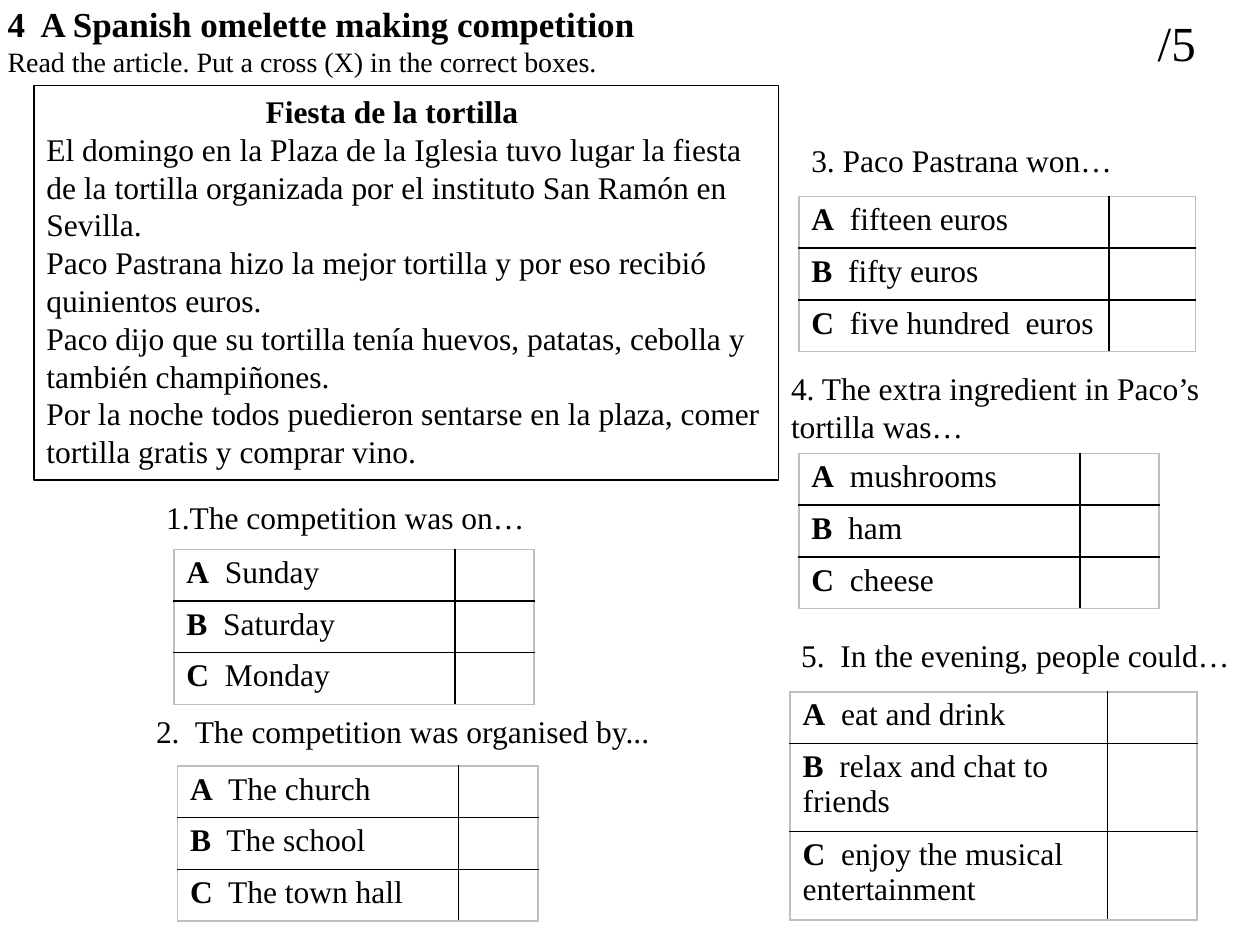
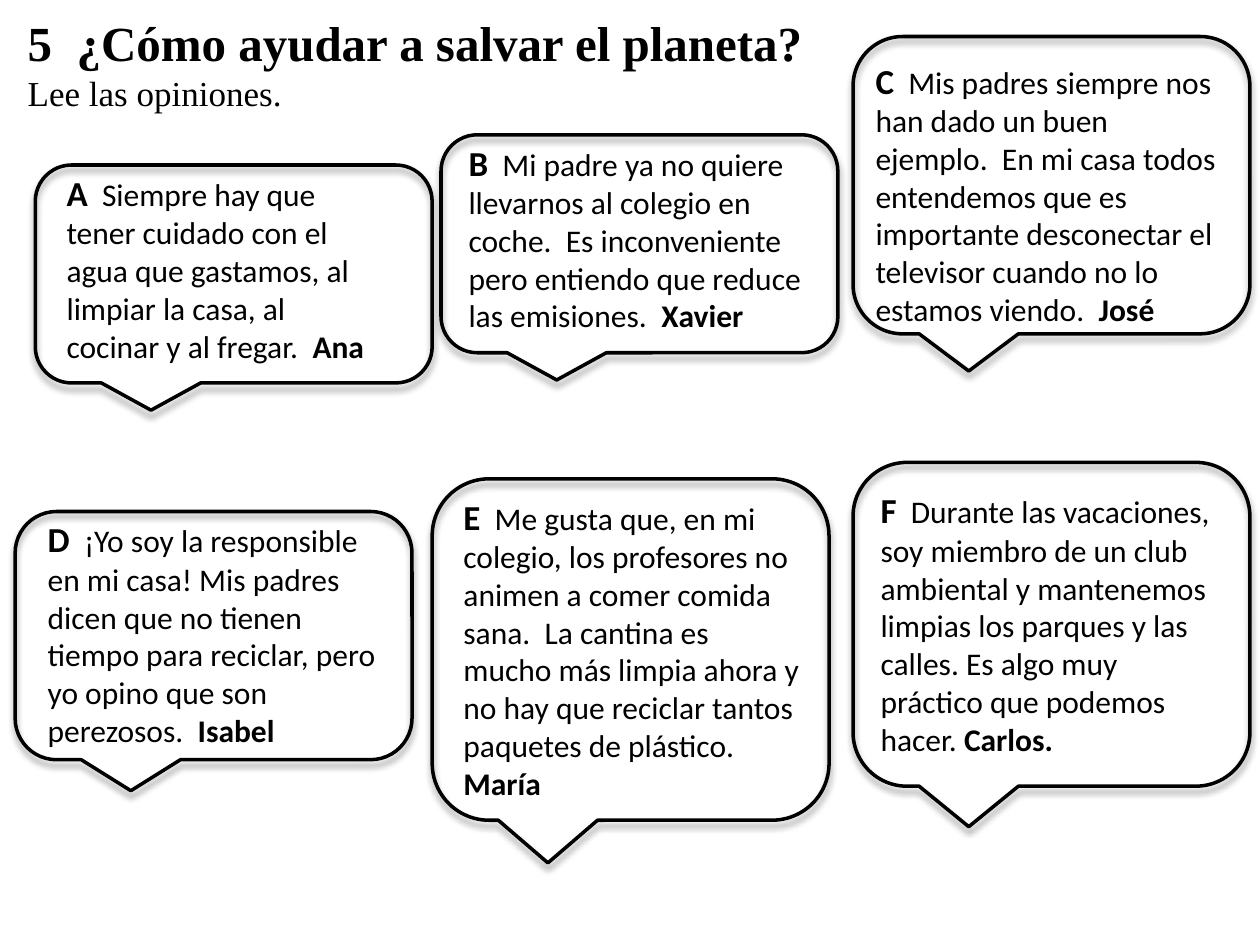
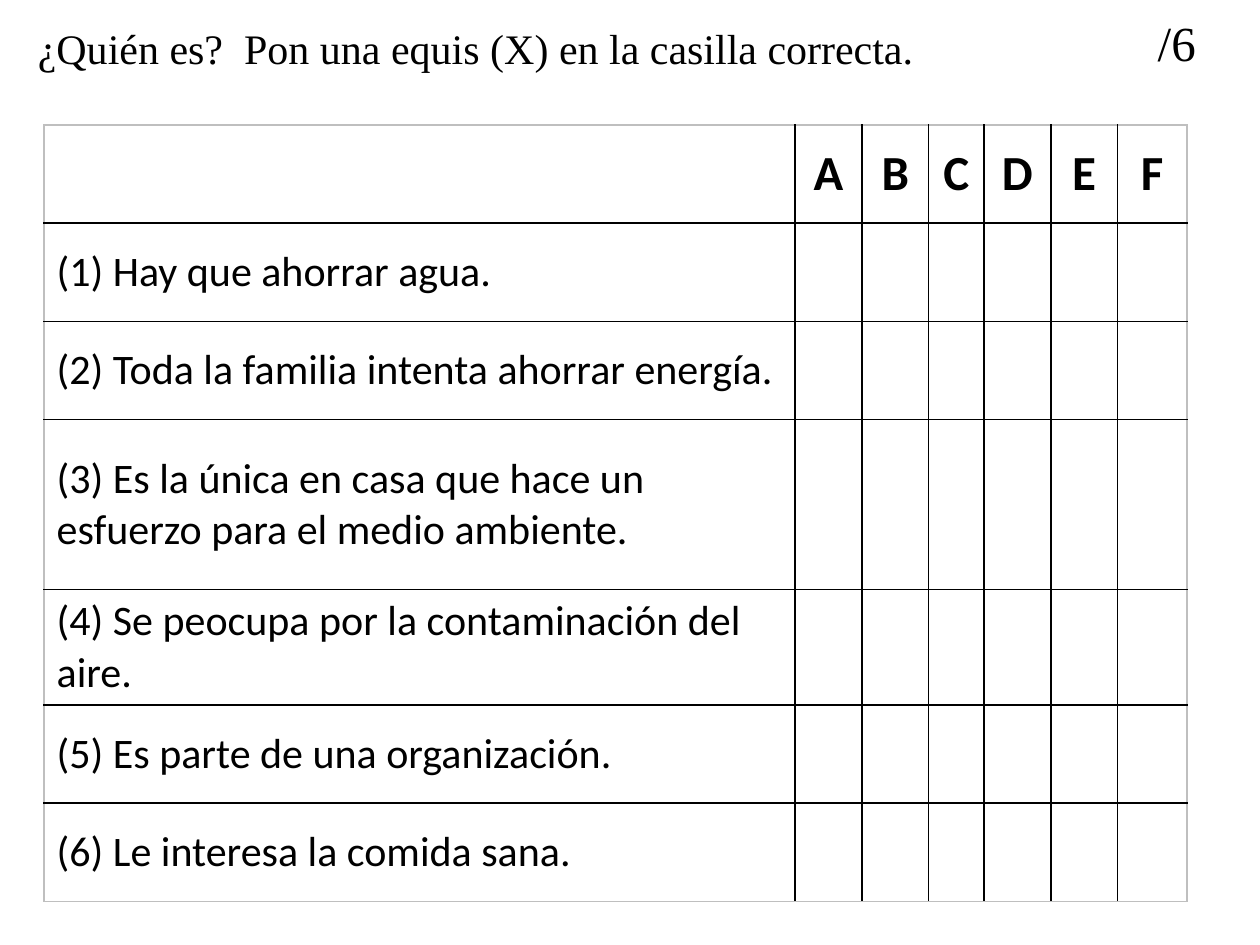
from lxml.etree import SubElement
from pptx import Presentation
from pptx.dml.color import RGBColor
from pptx.enum.shapes import MSO_SHAPE
from pptx.enum.text import MSO_ANCHOR, MSO_AUTO_SIZE, PP_ALIGN
from pptx.oxml.ns import qn
from pptx.util import Inches, Pt

# Shared style
BLACK = RGBColor(0, 0, 0)
EDGE_GREY = RGBColor(0xBF, 0xBF, 0xBF)
SERIF = "Times New Roman"
SANS = "Calibri"
SERIF_LEADING = 1.2
CELL_LEADING = 1.1
TITLE_ONLY = 5


# Text helpers
def write_runs(paragraph, runs, font=SERIF, leading=None):
    """Fill a paragraph with (text, size, bold) runs."""
    paragraph.alignment = PP_ALIGN.LEFT
    for text, size, bold in runs:
        run = paragraph.add_run()
        run.text = text
        run.font.name = font
        run.font.size = Pt(size)
        run.font.bold = bold
        run.font.color.rgb = BLACK
    if leading:
        paragraph.line_spacing = Pt(round(runs[0][1] * leading, 1))


def write_paragraphs(shape, paragraphs, font=SERIF, leading=SERIF_LEADING):
    frame = shape.text_frame
    frame.word_wrap = True
    frame.auto_size = MSO_AUTO_SIZE.NONE
    frame.vertical_anchor = MSO_ANCHOR.TOP
    for index, runs in enumerate(paragraphs):
        paragraph = frame.add_paragraph() if index else frame.paragraphs[0]
        write_runs(paragraph, runs, font, leading)


def add_text(slide, box, paragraphs, font=SERIF, leading=SERIF_LEADING):
    text_box = slide.shapes.add_textbox(*map(Inches, box))
    write_paragraphs(text_box, paragraphs, font, leading)


def add_titled_slide(presentation, box, paragraphs):
    slide = presentation.slides.add_slide(presentation.slide_layouts[TITLE_ONLY])
    title = slide.shapes.title
    title.left, title.top, title.width, title.height = map(Inches, box)
    write_paragraphs(title, paragraphs)
    return slide


def add_score(slide, text):
    add_text(slide, (9.09, 0.05, 0.87, 0.57), [[(text, 28, False)]])


# Table helpers
def set_border(cell, side, color):
    line = SubElement(cell._tc.get_or_add_tcPr(), qn(f"a:ln{side}"), w=str(Pt(1)))
    fill = SubElement(line, qn("a:solidFill"))
    SubElement(fill, qn("a:srgbClr"), val=str(color))


def add_grid(slide, left, top, widths, heights):
    """Add an unfilled table with black inner lines and a grey edge."""
    frame = slide.shapes.add_table(
        len(heights), len(widths), Inches(left), Inches(top),
        Inches(sum(widths)), Inches(sum(heights)))
    table = frame.table
    table.first_row = table.horz_banding = False
    for column, width in zip(table.columns, widths):
        column.width = Inches(width)
    for row, height in zip(table.rows, heights):
        row.height = Inches(height)
    last_row, last_column = len(heights) - 1, len(widths) - 1
    for r in range(len(heights)):
        for c in range(len(widths)):
            cell = table.cell(r, c)
            on_edge = {"L": c == 0, "R": c == last_column,
                       "T": r == 0, "B": r == last_row}
            for side, outer in on_edge.items():
                set_border(cell, side, EDGE_GREY if outer else BLACK)
            cell.fill.background()
    return table


# Slide 1: article with multiple-choice questions
def add_article(slide, left, top):
    panel = slide.shapes.add_shape(
        MSO_SHAPE.RECTANGLE, Inches(left), Inches(top), Inches(5.91), Inches(3.13))
    panel.shadow.inherit = False
    panel.fill.background()
    panel.line.color.rgb = BLACK
    panel.line.width = Pt(0.75)
    panel.text_frame.margin_top = Inches(0.35)
    write_paragraphs(panel, [[(text, 18, False)] for text in ARTICLE])
    add_text(slide, (left + 1.74, top, 2.76, 0.4),
             [[("Fiesta de la tortilla", 18, True)]])


def add_question(slide, question_box, question, table_at, widths, answers,
                 heights=(0.41, 0.41, 0.41)):
    add_text(slide, question_box, [[(question, 18, False)]])
    table = add_grid(slide, *table_at, widths, heights)
    for row, (letter, answer) in enumerate(zip("ABC", answers)):
        write_runs(table.cell(row, 0).text_frame.paragraphs[0],
                   [(letter, 18, True), (f"  {answer}", 18, False)],
                   leading=CELL_LEADING)


ARTICLE = [
    "El domingo en la Plaza de la Iglesia tuvo lugar la fiesta de la tortilla "
    "organizada por el instituto San Ramón en Sevilla.",
    "Paco Pastrana hizo la mejor tortilla y por eso recibió quinientos euros.",
    "Paco dijo que su tortilla tenía huevos, patatas, cebolla y también champiñones.",
    "Por la noche todos puedieron sentarse en la plaza, comer tortilla gratis "
    "y comprar vino.",
]

# Question box, question, table position, column widths, answers, row heights
NARROW = (2.23, 0.63)
QUESTIONS = [
    ((1.22, 3.9, 4.02, 0.4), "1.The competition was on…",
     (1.38, 4.36), NARROW, ("Sunday", "Saturday", "Monday")),
    ((1.14, 5.6, 4.8, 0.4), "2.  The competition was organised by...",
     (1.41, 6.08), NARROW, ("The church", "The school", "The town hall")),
    ((6.34, 1.07, 4.02, 0.4), "3. Paco Pastrana won…",
     (6.34, 1.56), (2.46, 0.69),
     ("fifteen euros", "fifty euros", "five hundred  euros")),
    ((6.18, 2.88, 3.46, 0.71), "4. The extra ingredient in Paco’s tortilla was…",
     (6.34, 3.6), NARROW, ("mushrooms", "ham", "cheese")),
    ((6.26, 5, 4.02, 0.4), "5.  In the evening, people could…",
     (6.27, 5.49), (2.52, 0.71),
     ("eat and drink", "relax and chat to friends",
      "enjoy the musical entertainment"), (0.41, 0.7, 0.7)),
]


def build_article_slide(presentation):
    slide = add_titled_slide(presentation, (-0.04, -0.03, 5.35, 0.98), [
        [("4  A Spanish omelette making competition", 20, True)],
        [("Read the article. Put a cross (X) in the correct boxes.", 16, False)]])
    add_score(slide, "/5")
    add_article(slide, 0.27, 0.68)
    for question in QUESTIONS:
        add_question(slide, *question)


# Slide 2: opinions in speech bubbles
def add_bubble(slide, left, top, height):
    bubble = slide.shapes.add_shape(
        MSO_SHAPE.ROUNDED_RECTANGULAR_CALLOUT,
        Inches(left), Inches(top), Inches(3.15), Inches(height))
    bubble.fill.background()
    bubble.line.color.rgb = BLACK
    bubble.line.width = Pt(2)
    bubble.shadow.inherit = False
    effects = bubble._element.spPr.find(qn("a:effectLst"))
    shadow = SubElement(effects, qn("a:outerShdw"), blurRad=str(Pt(4)),
                        dist=str(Pt(3)), dir="5400000", rotWithShape="0")
    color = SubElement(shadow, qn("a:srgbClr"), val=str(BLACK))
    SubElement(color, qn("a:alpha"), val="40000")


def add_opinion(slide, letter, bubble_box, text_box, opinion, name):
    add_text(slide, text_box, [[
        (letter, 20, True), (f"  {opinion}", 18, False), (name, 18, True)]],
        font=SANS, leading=None)
    add_bubble(slide, *bubble_box)


# Bubble left, top, height; text box; opinion; speaker
OPINIONS = [
    ((0.28, 1.31, 1.73), (0.43, 1.31, 2.68, 1.65),
     "Siempre hay que tener cuidado con el agua que gastamos, al limpiar la "
     "casa, al cocinar y al fregar.  ", "Ana"),
    ((3.5, 1.07, 1.73), (3.62, 1.07, 2.91, 1.65),
     "Mi padre ya no quiere llevarnos al colegio en coche.  Es inconveniente "
     "pero entiendo que reduce las emisiones.  ", "Xavier"),
    ((6.77, 0.29, 2.36), (6.85, 0.42, 2.99, 2.26),
     "Mis padres siempre nos han dado un buen ejemplo.  En mi casa todos "
     "entendemos que es importante desconectar el televisor cuando no lo "
     "estamos viendo.  ", "José"),
    ((0.12, 4.06, 1.97), (0.28, 4.06, 2.95, 1.95),
     "¡Yo soy la responsible en mi casa! Mis padres dicen que no tienen tiempo "
     "para reciclar, pero yo opino que son perezosos.  ", "Isabel"),
    ((3.43, 3.8, 2.71), (3.58, 3.88, 2.87, 2.56),
     "Me gusta que, en mi colegio, los profesores no animen a comer comida "
     "sana.  La cantina es mucho más limpia ahora y no hay que reciclar tantos "
     "paquetes de plástico. ", "María"),
    ((6.77, 3.67, 2.57), (6.89, 3.83, 2.86, 2.26),
     "Durante las vacaciones, soy miembro de un club ambiental y mantenemos "
     "limpias los parques y las calles. Es algo muy práctico que podemos "
     "hacer. ", "Carlos."),
]


def build_opinions_slide(presentation):
    slide = add_titled_slide(presentation, (0.12, 0.05, 6.82, 0.91), [
        [("5  ¿Cómo ayudar a salvar el planeta?", 28, True)],
        [("Lee las opiniones.", 20, False)]])
    for letter, opinion in zip("ABCDEF", OPINIONS):
        add_opinion(slide, letter, *opinion)


# Slide 3: answer grid
STATEMENTS = [
    "Hay que ahorrar agua.",
    "Toda la familia intenta ahorrar energía.",
    "Es la única en casa que hace un esfuerzo para el medio ambiente.",
    "Se peocupa por la contaminación del aire.",
    "Es parte de una organización.",
    "Le interesa la comida sana.",
]


def add_answer_grid(slide, left, top):
    table = add_grid(slide, left, top,
                     (5.96, 0.53, 0.53, 0.44, 0.53, 0.53, 0.55),
                     (0.78, 0.78, 0.78, 1.35, 0.9, 0.78, 0.78))
    for column, letter in enumerate("ABCDEF", start=1):
        cell = table.cell(0, column)
        cell.vertical_anchor = MSO_ANCHOR.MIDDLE
        paragraph = cell.text_frame.paragraphs[0]
        write_runs(paragraph, [(letter, 28, True)], SANS)
        paragraph.alignment = PP_ALIGN.CENTER
    for row, statement in enumerate(STATEMENTS, start=1):
        cell = table.cell(row, 0)
        cell.vertical_anchor = MSO_ANCHOR.MIDDLE
        write_runs(cell.text_frame.paragraphs[0],
                   [(f"({row}) {statement}", 24, False)], SANS)


def build_answers_slide(presentation):
    slide = add_titled_slide(presentation, (0.2, 0.13, 7.21, 0.5), [
        [("¿Quién es?  Pon una equis (X) en la casilla correcta.", 24, False)]])
    add_score(slide, "/6")
    add_answer_grid(slide, 0.35, 0.99)


def main():
    presentation = Presentation()
    presentation.slide_width = Inches(10)
    presentation.slide_height = Inches(7.5)
    build_article_slide(presentation)
    build_opinions_slide(presentation)
    build_answers_slide(presentation)
    presentation.save("out.pptx")


if __name__ == "__main__":
    main()
